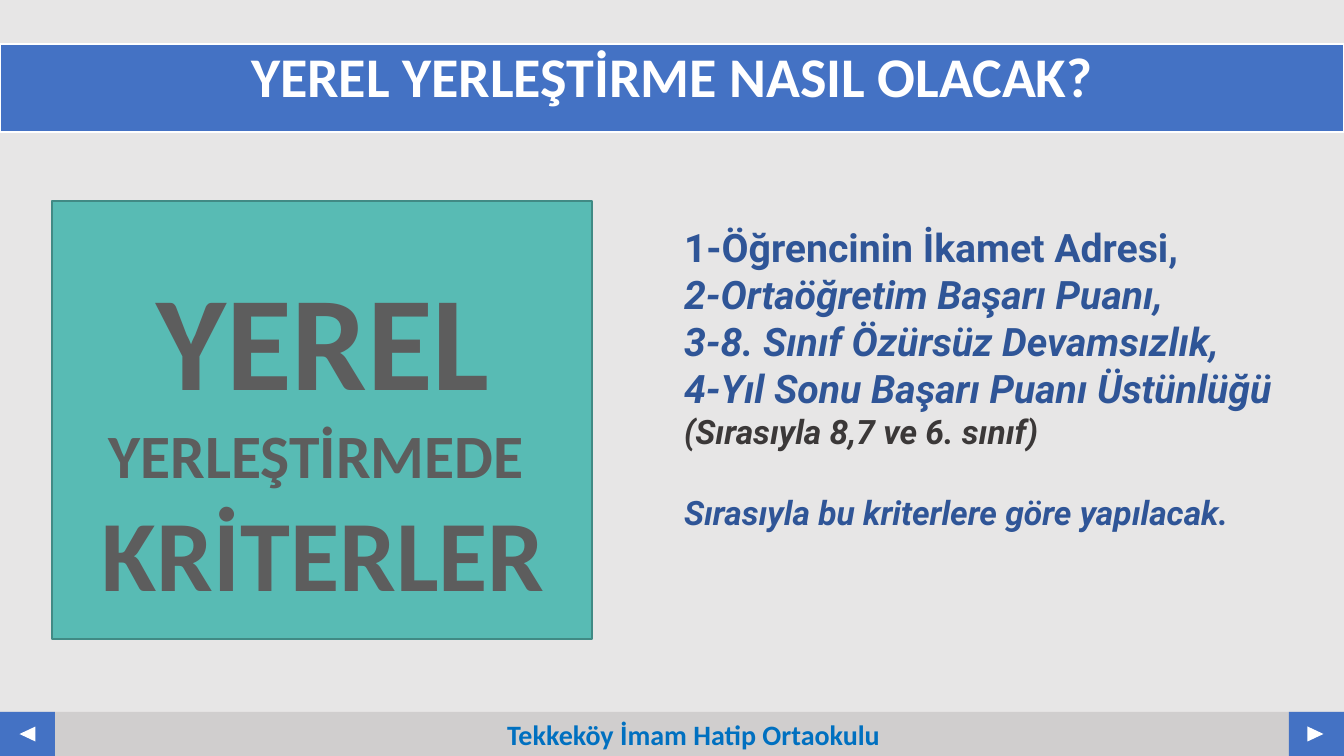
from pptx import Presentation
from pptx.dml.color import RGBColor
from pptx.enum.shapes import MSO_SHAPE
from pptx.enum.text import MSO_ANCHOR, MSO_AUTO_SIZE, PP_ALIGN
from pptx.oxml.ns import qn
from pptx.util import Pt

RECT, TRIANGLE = MSO_SHAPE.RECTANGLE, MSO_SHAPE.ISOSCELES_TRIANGLE
TOP, MIDDLE = MSO_ANCHOR.TOP, MSO_ANCHOR.MIDDLE
LEFT, CENTER = PP_ALIGN.LEFT, PP_ALIGN.CENTER
NO_FIT = MSO_AUTO_SIZE.NONE

W, H = 1344, 756
PX = 12192000 / W

THEME = {
    "page": "E7E6E6", "bar": "D0CECE", "accent": "4472C4", "white": "FFFFFF",
    "card": "58BBB4", "card_line": "418A85",
    "title": {"name": "Calibri", "size": 40, "bold": True, "italic": False, "color": "FFFFFF"},
    "first": {"name": "Roboto", "size": 28, "bold": True, "italic": False, "color": "2F5597"},
    "item": {"name": "Roboto", "size": 28, "bold": True, "italic": True, "color": "2F5597"},
    "note": {"name": "Roboto", "size": 24, "bold": True, "italic": True, "color": "3B3838"},
    "closing": {"name": "Roboto", "size": 24, "bold": True, "italic": True, "color": "2F5597"},
    "footer": {"name": "Calibri", "size": 20, "bold": True, "italic": False, "color": "0070C0"},
    "huge": {"name": "Calibri", "size": 96, "bold": True, "italic": False, "color": "5D5D5D"},
    "medium": {"name": "Calibri", "size": 44, "bold": True, "italic": False, "color": "5D5D5D"},
    "large": {"name": "Calibri", "size": 72, "bold": True, "italic": False, "color": "5D5D5D"},
}


def add_box(kind, box, fill, line=None, width=1):
    sp = s.shapes.add_shape(kind, *[round(v * PX) for v in box])
    sp.shadow.inherit = False
    sp.fill.solid()
    sp.fill.fore_color.rgb = RGBColor.from_string(THEME[fill])
    if line:
        sp.line.color.rgb = RGBColor.from_string(THEME[line])
        sp.line.width = Pt(width)
    else:
        sp.line.fill.background()
    return sp


def write(sp, box, paragraphs, align, anchor, inset=(10, 5, 10, 5)):
    sp.left, sp.top, sp.width, sp.height = [round(v * PX) for v in box]
    tf = sp.text_frame
    tf.word_wrap, tf.auto_size, tf.vertical_anchor = True, NO_FIT, anchor
    sides = ("margin_left", "margin_top", "margin_right", "margin_bottom")
    for side, v in zip(sides, inset):
        setattr(tf, side, round(v * PX))
    for i, runs in enumerate(paragraphs):
        p = tf.add_paragraph() if i else tf.paragraphs[0]
        p.alignment, p.space_before = align, Pt(0)
        for text, style in runs:
            r = p.add_run()
            r.text = text
            for key, value in THEME[style].items():
                if key == "color":
                    r.font.color.rgb = RGBColor.from_string(value)
                else:
                    setattr(r.font, key, Pt(value) if key == "size" else value)
    return tf


prs = Presentation()
prs.slide_width, prs.slide_height = round(W * PX), round(H * PX)
s = prs.slides.add_slide(prs.slide_layouts[1])
s.background.fill.solid()
s.background.fill.fore_color.rgb = RGBColor.from_string(THEME["page"])

add_box(RECT, (0, 712, W, 44), "bar")
for button_x, arrow_x, angle in ((0, 20, 270), (W - 55, 1308, 90)):
    add_box(RECT, (button_x, 712, 55, 44), "accent")
    add_box(TRIANGLE, (arrow_x, 726, 15, 16), "white").rotation = angle

title = s.shapes.title
title.fill.solid()
title.fill.fore_color.rgb = RGBColor.from_string(THEME["accent"])
title.line.color.rgb = RGBColor.from_string(THEME["white"])
title.line.width = Pt(1.5)
tf = write(title, (0, 44, W, 88), [[("YEREL YERLEŞTİRME NASIL OLACAK?", "title")]], CENTER, TOP)
tf.paragraphs[0].line_spacing = 0.9

criteria = [
    [("1-Öğrencinin İkamet Adresi,", "first")],
    [("2-Ortaöğretim Başarı Puanı,", "item")],
    [("3-8. Sınıf Özürsüz Devamsızlık,", "item")],
    [("4-Yıl Sonu Başarı Puanı Üstünlüğü ", "item"), ("(Sırasıyla 8,7 ve 6. sınıf)", "note")],
    [("Sırasıyla bu kriterlere göre yapılacak.", "closing")],
]
tf = write(s.placeholders[1], (671, 207, 635, 434), criteria, LEFT, TOP, (13, 16, 13, 7))
for p in tf.paragraphs:
    pPr = p._p.get_or_add_pPr()
    pPr.set("marL", "0")
    pPr.set("indent", "0")
    pPr.append(pPr.makeelement(qn("a:buNone"), {}))
tf.paragraphs[-1].space_before = Pt(29)

footer = s.shapes.add_textbox(0, 0, 0, 0)
write(footer, (497, 712, 405, 44), [[("Tekkeköy İmam Hatip Ortaokulu", "footer")]], LEFT, TOP)

add_box(RECT, (52, 201, 540, 438), "card", "card_line")
card_text = [
    [("YEREL", "huge"), (" YERLEŞTİRMEDE ", "medium")],
    [("KRİTERLER", "large")],
]
write(s.shapes.add_textbox(0, 0, 0, 0), (89, 249, 469, 370), card_text, CENTER, MIDDLE)

prs.save("out.pptx")
